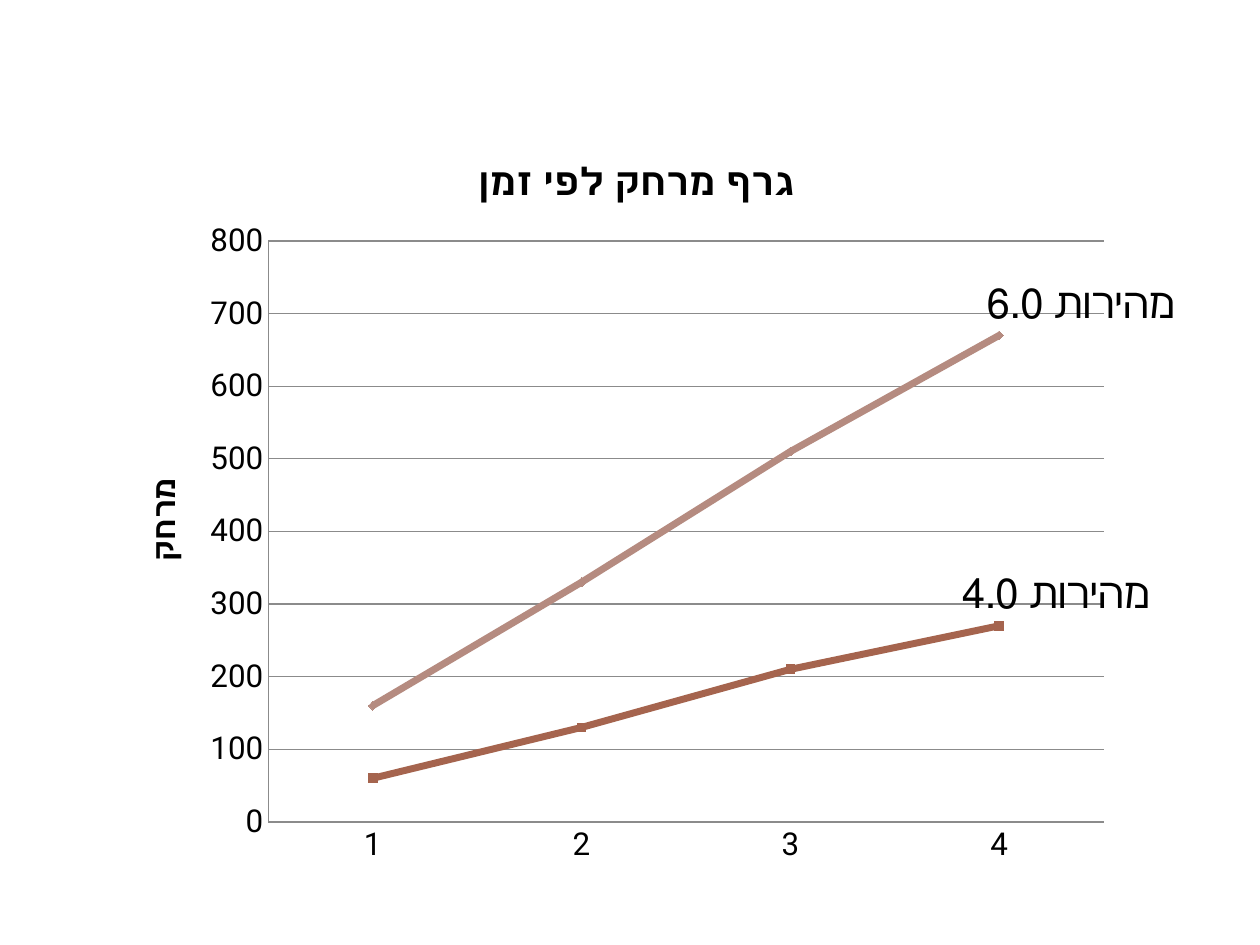
import pptx
import pptx.chart.data
import pptx.dml.color
import pptx.enum.chart
import pptx.oxml
import pptx.oxml.ns
import pptx.util

PX = pptx.util.Inches(1) // 126
RGB = pptx.dml.color.RGBColor
BLACK = RGB(0x00, 0x00, 0x00)
GRAY = RGB(0x8B, 0x8B, 0x8B)
RUST = RGB(0xA5, 0x64, 0x4E)
ROSE = RGB(0xB5, 0x8B, 0x80)
FONT = "Roboto"

MARKER = pptx.enum.chart.XL_MARKER_STYLE
TICK = pptx.enum.chart.XL_TICK_MARK
# values, colour, marker, text beside the last point, shift of that text in px
SPEEDS = [
    ((60, 130, 210, 270), RUST, MARKER.SQUARE, "מהירות 4.0", (57, 0)),
    ((100, 200, 300, 400), ROSE, MARKER.DIAMOND, "מהירות 6.0", (82, 0)),
]


def format_font(font, **values):
    values = {"name": FONT, "size": pptx.util.Pt(18), "bold": False, **values}
    for name, value in values.items():
        setattr(font, name, value)
    font.color.rgb = BLACK


def format_line(line, color, width):
    line.color.rgb = color
    line.width = pptx.util.Pt(width)


def make_layout(fractions, inner=False, edge=False):
    """Return a manual layout element from fractions of the chart's size."""
    parts = '<c:layoutTarget val="inner"/>' if inner else ""
    if edge:
        parts += '<c:xMode val="edge"/><c:yMode val="edge"/>'
    for name, value in zip("xywh", fractions):
        parts += f'<c:{name} val="{value:.4f}"/>'
    return pptx.oxml.parse_xml(
        f'<c:layout {pptx.oxml.ns.nsdecls("c")}>'
        f"<c:manualLayout>{parts}</c:manualLayout></c:layout>")


def set_layout(parent, layout, after=None):
    for old in parent.findall(pptx.oxml.ns.qn("c:layout")):
        parent.remove(old)
    if after is None:
        parent.insert(0, layout)
    else:
        parent.find(pptx.oxml.ns.qn(after)).addnext(layout)


def add_distance_chart(slide, left, top, width, height):
    data = pptx.chart.data.CategoryChartData()
    data.categories = ["1", "2", "3", "4"]
    for number, speed in enumerate(SPEEDS, 1):
        data.add_series(f"Series {number}", speed[0])
    frame = slide.shapes.add_chart(
        pptx.enum.chart.XL_CHART_TYPE.LINE_MARKERS_STACKED,
        *(n * PX for n in (left, top, width, height)), data)
    chart = frame.chart
    chart.has_legend = False
    format_font(chart.font)

    def share(x, y):
        return x / width, y / height

    # Plot area
    set_layout(chart.plots[0]._element.getparent(),
               make_layout(share(146, 116) + share(839, 581), True, True))

    # Axes
    distance, time = chart.value_axis, chart.category_axis
    for axis in (distance, time):
        axis.major_tick_mark = axis.minor_tick_mark = TICK.NONE
        format_line(axis.format.line, GRAY, 0.75)
        format_font(axis.tick_labels.font)
    for name, value in {"minimum_scale": 0, "maximum_scale": 800,
                        "major_unit": 100, "has_major_gridlines": True}.items():
        setattr(distance, name, value)
    format_line(distance.major_gridlines.format.line, GRAY, 0.75)

    # Titles
    chart.has_title = True
    for owner, text, size, place in (
            (chart.chart_title, "גרף מרחק לפי זמן", 21.6, (350, 29)),
            (distance.axis_title, "מרחק", 18, (18, 347))):
        owner.text_frame.text = text
        format_font(owner.text_frame.paragraphs[0].runs[0].font,
                    size=pptx.util.Pt(size), bold=True)
        set_layout(owner._element, make_layout(share(*place), edge=True), "c:tx")

    # Speed lines with a label on the last point
    for series, (values, color, marker, text, shift) in zip(
            chart.plots[0].series, SPEEDS):
        series.smooth = False
        format_line(series.format.line, color, 4)
        series.marker.style = marker
        series.marker.size = 5
        series.marker.format.fill.solid()
        series.marker.format.fill.fore_color.rgb = color
        format_line(series.marker.format.line, color, 0.75)
        label = series.points[len(values) - 1].data_label
        label.text_frame.text = text
        format_font(label.text_frame.paragraphs[0].runs[0].font,
                    size=pptx.util.Pt(24))
        label.position = pptx.enum.chart.XL_LABEL_POSITION.ABOVE
        label_xml = label.text_frame._element.getparent().getparent()
        set_layout(label_xml, make_layout(share(*shift)), "c:idx")


def main():
    deck = pptx.Presentation()
    deck.slide_width = 1260 * PX
    deck.slide_height = 945 * PX
    slide = deck.slides.add_slide(deck.slide_layouts[6])
    add_distance_chart(slide, 123, 125, 1052, 753)
    deck.save("out.pptx")


if __name__ == "__main__":
    main()
